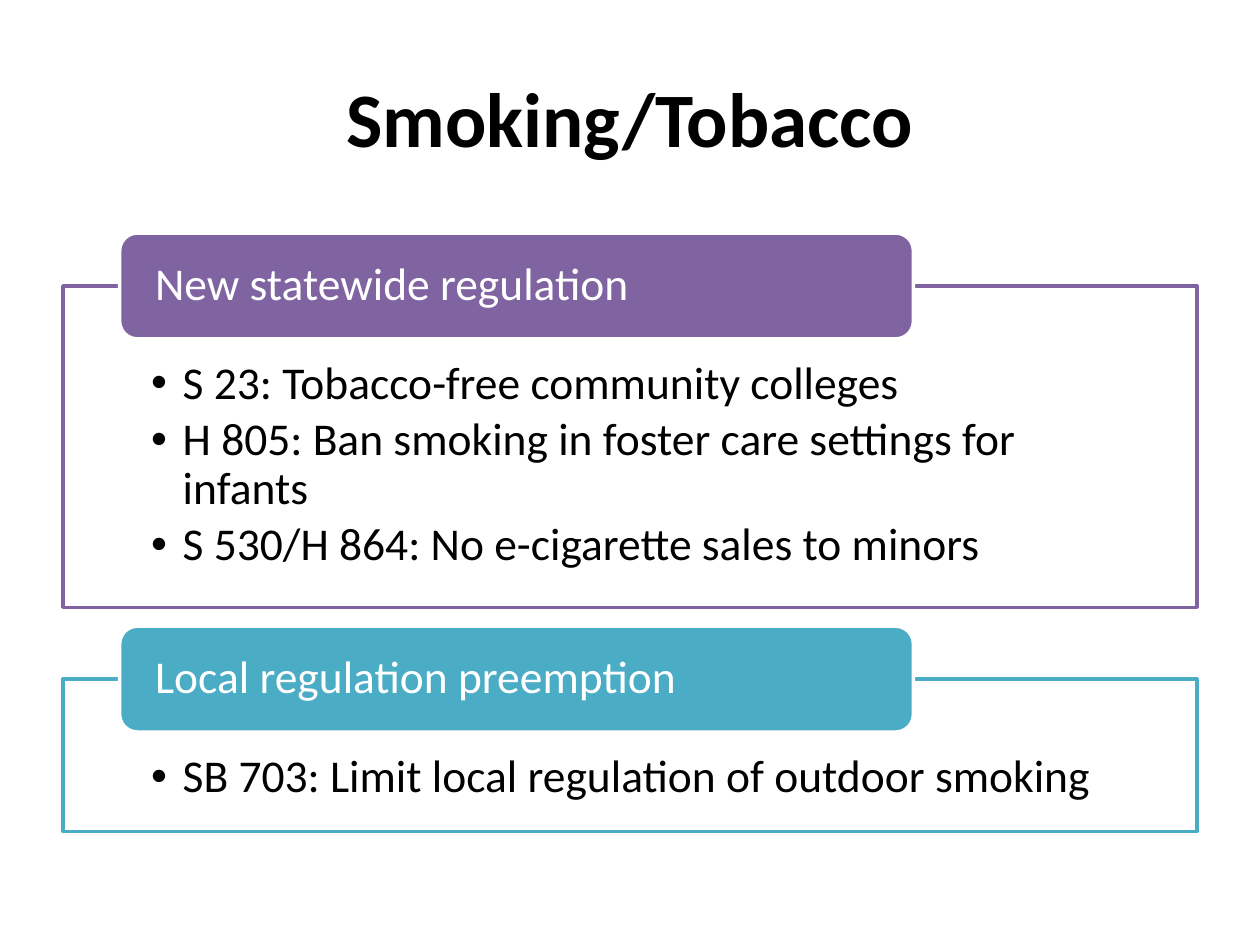
from lxml import etree
from pptx import Presentation
from pptx.dml.color import RGBColor
from pptx.enum.shapes import MSO_SHAPE
from pptx.enum.text import MSO_ANCHOR, PP_ALIGN
from pptx.oxml.ns import qn
from pptx.util import Inches, Pt

RECTANGLE, ROUNDED = MSO_SHAPE.RECTANGLE, MSO_SHAPE.ROUNDED_RECTANGLE
TOP, MIDDLE = MSO_ANCHOR.TOP, MSO_ANCHOR.MIDDLE
LEFT, CENTER = PP_ALIGN.LEFT, PP_ALIGN.CENTER
PURPLE = RGBColor(0x80, 0x64, 0xA2)
TEAL = RGBColor(0x4B, 0xAC, 0xC6)
BLACK = RGBColor(0, 0, 0)
WHITE = RGBColor(0xFF, 0xFF, 0xFF)
FONT = "Calibri"

TITLE = "Smoking/Tobacco"
SECTIONS = [
    ("New statewide regulation", PURPLE, 2.55, [
        "S 23: Tobacco-free community colleges",
        "H 805: Ban smoking in foster care settings for infants",
        "S 530/H 864: No e-cigarette sales to minors",
    ]),
    ("Local regulation preemption", TEAL, 1.21, [
        "SB 703: Limit local regulation of outdoor smoking",
    ]),
]
MARGIN, PANEL_WIDTH = 0.5, 9
HEADER_LEFT, HEADER_WIDTH, HEADER_HEIGHT = 0.95, 6.3, 0.84
FIRST_TOP, GAP = 1.85, 0.15


def format_text(para, size, color, bold=False):
    for span in para.runs:
        span.font.name = FONT
        span.font.size = Pt(size)
        span.font.bold = bold
        span.font.color.rgb = color


def add_bullet(para):
    properties = para._p.get_or_add_pPr()
    properties.set("marL", str(Inches(0.25)))
    properties.set("indent", str(-Inches(0.25)))
    etree.SubElement(properties, qn("a:buFont"), typeface="Arial")
    etree.SubElement(properties, qn("a:buChar"), char="•")


def add_box(page, kind, bounds, fill, line, insets, anchor, lines, color):
    box = page.shapes.add_shape(kind, *map(Inches, bounds))
    box.shadow.inherit = False
    box.fill.solid()
    box.fill.fore_color.rgb = fill
    box.line.color.rgb = line
    box.line.width = Pt(2)
    frame = box.text_frame
    frame.word_wrap = True
    frame.vertical_anchor = anchor
    (frame.margin_left, frame.margin_top,
     frame.margin_right, frame.margin_bottom) = map(Inches, insets)
    frame.text = "\n".join(lines)
    for para in frame.paragraphs:
        para.alignment = LEFT
        para.line_spacing = 0.9
        para.space_after = Pt(4)
        format_text(para, 26, color)
    return box


def add_section(page, top, heading, color, height, items):
    panel = add_box(page, RECTANGLE,
                    (MARGIN, top + HEADER_HEIGHT / 2, PANEL_WIDTH, height),
                    WHITE, color, (0.7, 0.59, 0.7, 0.2), TOP, items, BLACK)
    for para in panel.text_frame.paragraphs:
        add_bullet(para)
    header = add_box(page, ROUNDED,
                     (HEADER_LEFT, top, HEADER_WIDTH, HEADER_HEIGHT),
                     color, WHITE, (0.24, 0, 0.24, 0), MIDDLE, [heading], WHITE)
    header.text_frame.paragraphs[0].space_after = Pt(0)


def main():
    deck = Presentation()
    deck.slide_width, deck.slide_height = Inches(10), Inches(7.5)
    page = deck.slides.add_slide(deck.slide_layouts[5])

    title = page.shapes.title
    title.left, title.top = Inches(0.5), Inches(0.3)
    title.width, title.height = Inches(9), Inches(1.25)
    title.text_frame.text = TITLE
    title.text_frame.vertical_anchor = MIDDLE
    para = title.text_frame.paragraphs[0]
    para.alignment = CENTER
    format_text(para, 44, BLACK, bold=True)

    top = FIRST_TOP
    for heading, color, height, items in SECTIONS:
        add_section(page, top, heading, color, height, items)
        top += HEADER_HEIGHT / 2 + height + GAP

    deck.save("out.pptx")


if __name__ == "__main__":
    main()
